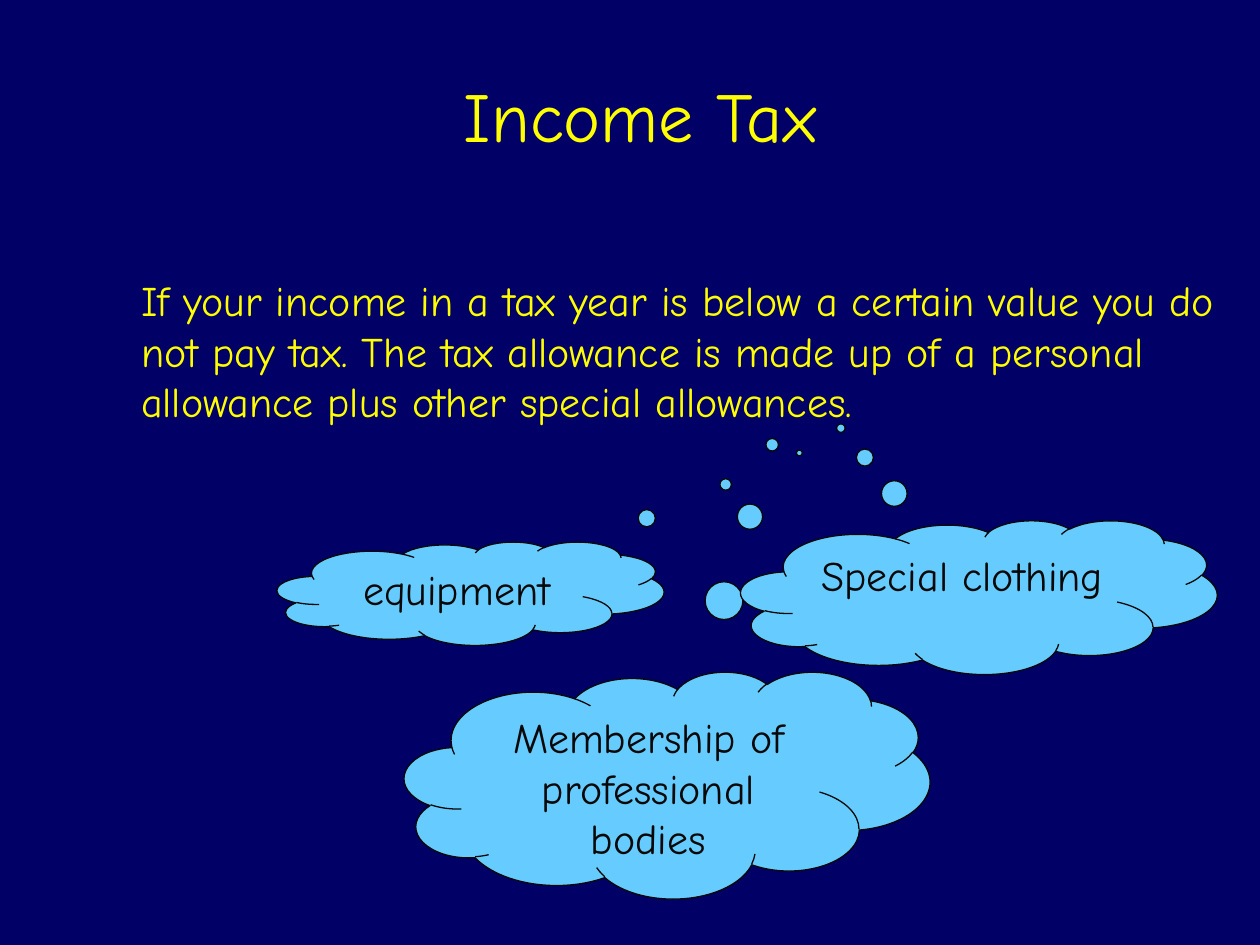
from lxml.etree import SubElement
from pptx import Presentation
from pptx.dml.color import RGBColor
from pptx.enum.shapes import MSO_SHAPE as Shape
from pptx.enum.text import MSO_ANCHOR as Anchor, MSO_AUTO_SIZE as AutoSize, PP_ALIGN as Align
from pptx.oxml.ns import qn
from pptx.util import Inches, Pt

NAVY, YELLOW, SKY, INK = "000066", "FFFF00", "66CCFF", "080808"

deck = Presentation()
deck.slide_width, deck.slide_height = Inches(10), Inches(7.5)
column, row = deck.slide_width / 100, deck.slide_height / 75


def paint(fill, color):
    fill.solid()
    fill.fore_color.rgb = RGBColor.from_string(color)


def write(box, text, size, color, align, anchor):
    frame = box.text_frame
    frame.word_wrap = True
    frame.auto_size = AutoSize.NONE
    frame.vertical_anchor = anchor
    para = frame.paragraphs[0]
    para.alignment = align
    para.space_before = Pt(0)
    span = para.add_run()
    span.text = text
    span.font.name = "Comic Neue"
    span.font.size = Pt(size)
    paint(span.font.fill, color)


page = deck.slides.add_slide(deck.slide_layouts[1])
paint(page.background.fill, NAVY)

title, body = page.placeholders
for box, (left, top, width, height) in (
    (title, (11.4, 2.8, 78.8, 12.5)),
    (body, (10.2, 21.3, 89.8, 13.1)),
):
    box.left, box.top = int(left * column), int(top * row)
    box.width, box.height = int(width * column), int(height * row)

write(title, "Income Tax", 40, YELLOW, Align.CENTER, Anchor.MIDDLE)

# The body is a plain paragraph: no bullet and no hanging indent
body_format = body.text_frame.paragraphs[0]._p.get_or_add_pPr()
body_format.set("marL", "0")
body_format.set("indent", "0")
SubElement(body_format, qn("a:buNone"))
write(
    body,
    "If your income in a tax year is below a certain value you do not pay tax. "
    "The tax allowance is made up of a personal allowance plus other special allowances.",
    24, YELLOW, Align.LEFT, Anchor.TOP,
)

# Thought clouds: text, place on the grid, and where the bubbles point
clouds = (
    ("Membership of professional bodies", (32.1, 53.3, 41.7, 18), (0.2, -1.5)),
    ("Special clothing", (58.8, 41.3, 37.8, 12.2), (-0.29, -1.1)),
    ("equipment", (22, 43, 30.7, 8.2), (0.85, -1.36)),
)
for text, (left, top, width, height), pointer in clouds:
    cloud = page.shapes.add_shape(
        Shape.CLOUD_CALLOUT,
        int(left * column), int(top * row), int(width * column), int(height * row),
    )
    cloud.shadow.inherit = False
    cloud.adjustments[0], cloud.adjustments[1] = pointer
    paint(cloud.fill, SKY)
    paint(cloud.line.fill, INK)
    cloud.line.width = Pt(0.75)
    write(cloud, text, 24, INK, Align.CENTER, Anchor.TOP)

deck.save("out.pptx")
